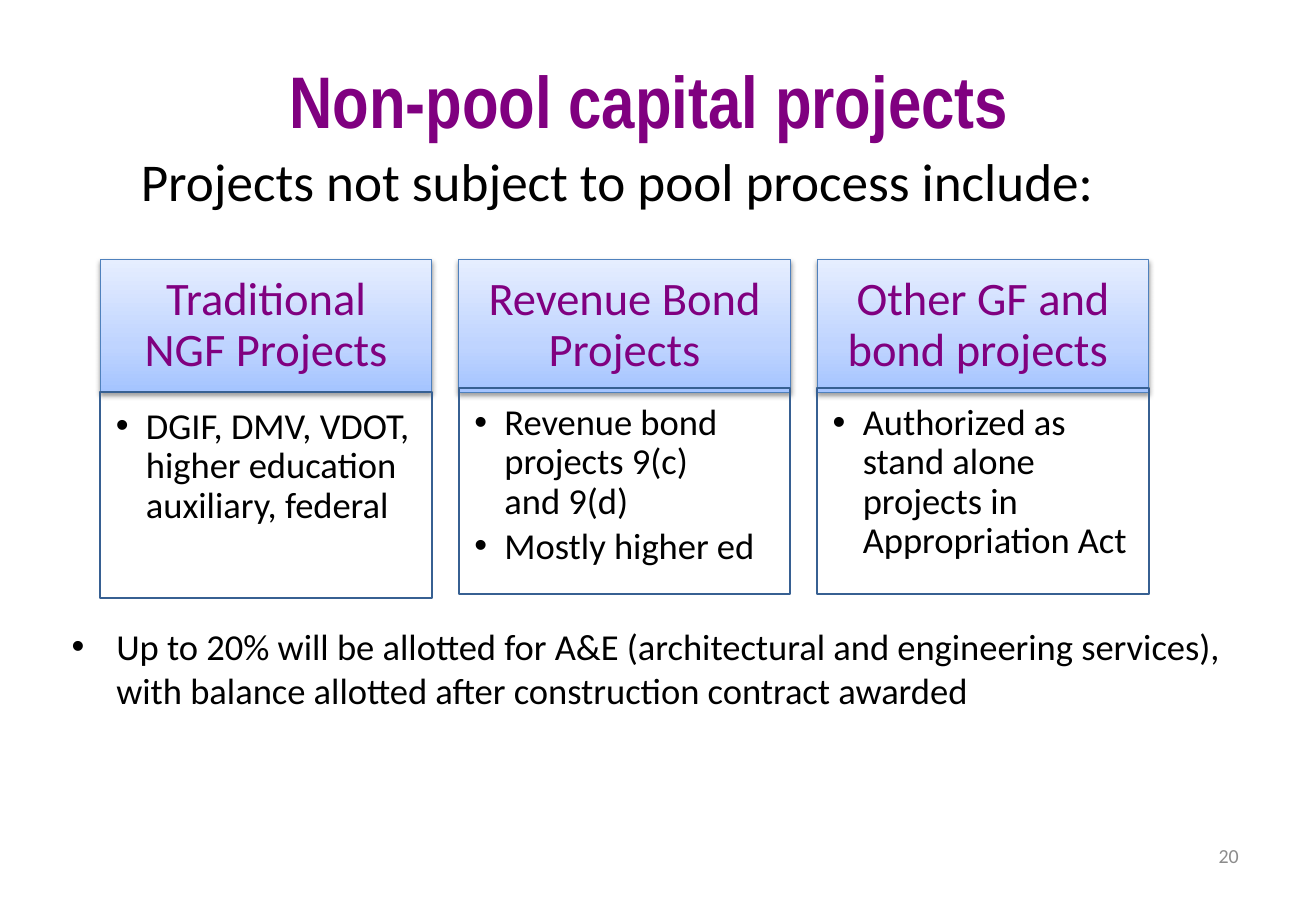
from lxml import etree
from pptx import Presentation
from pptx.dml.color import RGBColor
from pptx.enum import shapes, text
from pptx.oxml import parse_xml
from pptx.oxml.ns import nsdecls, qn
from pptx.util import Cm, Pt

# Content
TITLE = "Non-pool capital projects "
INTRO = "Projects not subject to pool process include:"
CARDS = [
    ("Traditional NGF Projects",
     ["DGIF, DMV, VDOT, higher education auxiliary, federal"]),
    ("Revenue Bond Projects",
     ["Revenue bond projects 9(c) \nand 9(d)", "Mostly higher ed"]),
    ("Other GF and bond projects ",
     ["Authorized as stand alone projects in Appropriation Act"]),
]
ALLOTMENT = ("Up to 20% will be allotted for A&E (architectural and engineering "
             "services), with balance allotted after construction contract awarded")
PAGE_NUMBER = "20"

THEME = {
    "body_font": "Calibri", "title_font": "Arial Narrow",
    "purple": "800080", "black": "000000", "grey": "8C8C8C",
    "head_line": "4F81BD", "body_line": "376092",
    "head_stops": [(0, "A4C4FF"), (35, "BFD4FF"), (100, "E6EEFF")],
    "title": 44, "intro": 32, "head": 28, "body": 22, "number": 12,
}

# Geometry in centimetres
CARD_LEFT, CARD_TOP, CARD_WIDTH, CARD_STEP = 2.13, 5.51, 7.04, 7.61
HEAD_HEIGHT, BODY_HEIGHT = 2.82, 4.37
BODY_TOPS = [8.33, 8.25, 8.25]
HEAD_INSETS = (0.56, 0.3, 0.56, 0.3)
BODY_INSETS = (0.33, 0.33, 0.43, 0.48)
INSETS = (0.25, 0.13, 0.25, 0.13)
HANGING = 0.95


def write(shape, lines, size, color="black", font="body_font", bold=False,
          align=text.PP_ALIGN.LEFT, anchor=text.MSO_ANCHOR.TOP, insets=INSETS,
          spacing=None, before=0, after=0, hanging=0, bullet=False):
    frame = shape.text_frame
    frame.word_wrap = True
    frame.auto_size = text.MSO_AUTO_SIZE.NONE
    frame.vertical_anchor = anchor
    (frame.margin_left, frame.margin_top,
     frame.margin_right, frame.margin_bottom) = map(Cm, insets)
    for i, line in enumerate(lines):
        paragraph = frame.add_paragraph() if i else frame.paragraphs[0]
        paragraph.text = line
        paragraph.alignment = align
        if spacing:
            paragraph.line_spacing = spacing
        props = paragraph._p.get_or_add_pPr()
        props.set("marL", str(Cm(hanging)))
        props.set("indent", str(-Cm(hanging)))
        for tag, percent in (("a:spcBef", before), ("a:spcAft", after)):
            gap = etree.SubElement(props, qn(tag))
            etree.SubElement(gap, qn("a:spcPct"), val=str(percent * 1000))
        if bullet:
            etree.SubElement(props, qn("a:buFont"), typeface="Arial")
            etree.SubElement(props, qn("a:buChar"), char="•")
        else:
            etree.SubElement(props, qn("a:buNone"))
        paragraph.font.size = Pt(THEME[size])
        paragraph.font.name = THEME[font]
        paragraph.font.bold = bold
        paragraph.font.color.rgb = RGBColor.from_string(THEME[color])


def add_text(slide, box, lines, size, **style):
    write(slide.shapes.add_textbox(*map(Cm, box)), lines, size, **style)


def add_box(slide, box, line, width):
    panel = slide.shapes.add_shape(shapes.MSO_SHAPE.RECTANGLE, *map(Cm, box))
    panel.shadow.inherit = False
    panel.fill.background()
    panel.line.color.rgb = RGBColor.from_string(THEME[line])
    panel.line.width = Pt(width)
    return panel


def shade(head):
    """Three-stop upward gradient and a soft shadow below."""
    stops = "".join(f'<a:gs pos="{pos * 1000}"><a:srgbClr val="{color}"/></a:gs>'
                    for pos, color in THEME["head_stops"])
    props = head._element.spPr
    props.replace(props.find(qn("a:noFill")), parse_xml(
        f'<a:gradFill {nsdecls("a")} rotWithShape="1"><a:gsLst>{stops}</a:gsLst>'
        '<a:lin ang="16200000" scaled="0"/></a:gradFill>'))
    props.find(qn("a:effectLst")).append(parse_xml(
        f'<a:outerShdw {nsdecls("a")} blurRad="{Pt(3.1)}" dist="{Pt(1.6)}" '
        'dir="5400000" rotWithShape="0"><a:srgbClr val="000000">'
        '<a:alpha val="38000"/></a:srgbClr></a:outerShdw>'))


def main():
    deck = Presentation()
    deck.slide_width, deck.slide_height = Cm(27.94), Cm(19.05)
    slide = deck.slides.add_slide(deck.slide_layouts[5])

    # Title and introduction
    title = slide.shapes.title
    title.left, title.top, title.width, title.height = map(
        Cm, (-0.64, 0.2, 29.21, 2.9))
    write(title, [TITLE], "title", color="purple", font="title_font", bold=True,
          align=text.PP_ALIGN.CENTER, anchor=text.MSO_ANCHOR.MIDDLE,
          spacing=1.5, hanging=HANGING)
    add_text(slide, (2.74, 3.18, 22.66, 2.54), [INTRO], "intro",
             spacing=0.9, before=20, hanging=HANGING)

    # Page number
    add_text(slide, (20.02, 17.65, 6.53, 1.02), [PAGE_NUMBER], "number",
             color="grey", align=text.PP_ALIGN.RIGHT,
             anchor=text.MSO_ANCHOR.MIDDLE)

    # Project cards
    for i, ((heading, points), body_top) in enumerate(zip(CARDS, BODY_TOPS)):
        left = CARD_LEFT + i * CARD_STEP
        head = add_box(slide, (left, CARD_TOP, CARD_WIDTH, HEAD_HEIGHT),
                       "head_line", 0.75)
        shade(head)
        write(head, [heading], "head", color="purple",
              align=text.PP_ALIGN.CENTER, anchor=text.MSO_ANCHOR.MIDDLE,
              insets=HEAD_INSETS, spacing=0.9, after=35)
        body = add_box(slide, (left, body_top, CARD_WIDTH, BODY_HEIGHT),
                       "body_line", 1.25)
        write(body, points, "body", insets=BODY_INSETS, spacing=0.9, after=15,
              hanging=0.64, bullet=True)

    # Allotment rule
    add_text(slide, (1.27, 13.13, 25.7, 3.61), [ALLOTMENT], "body",
             hanging=HANGING, bullet=True)

    deck.save("out.pptx")


if __name__ == "__main__":
    main()
